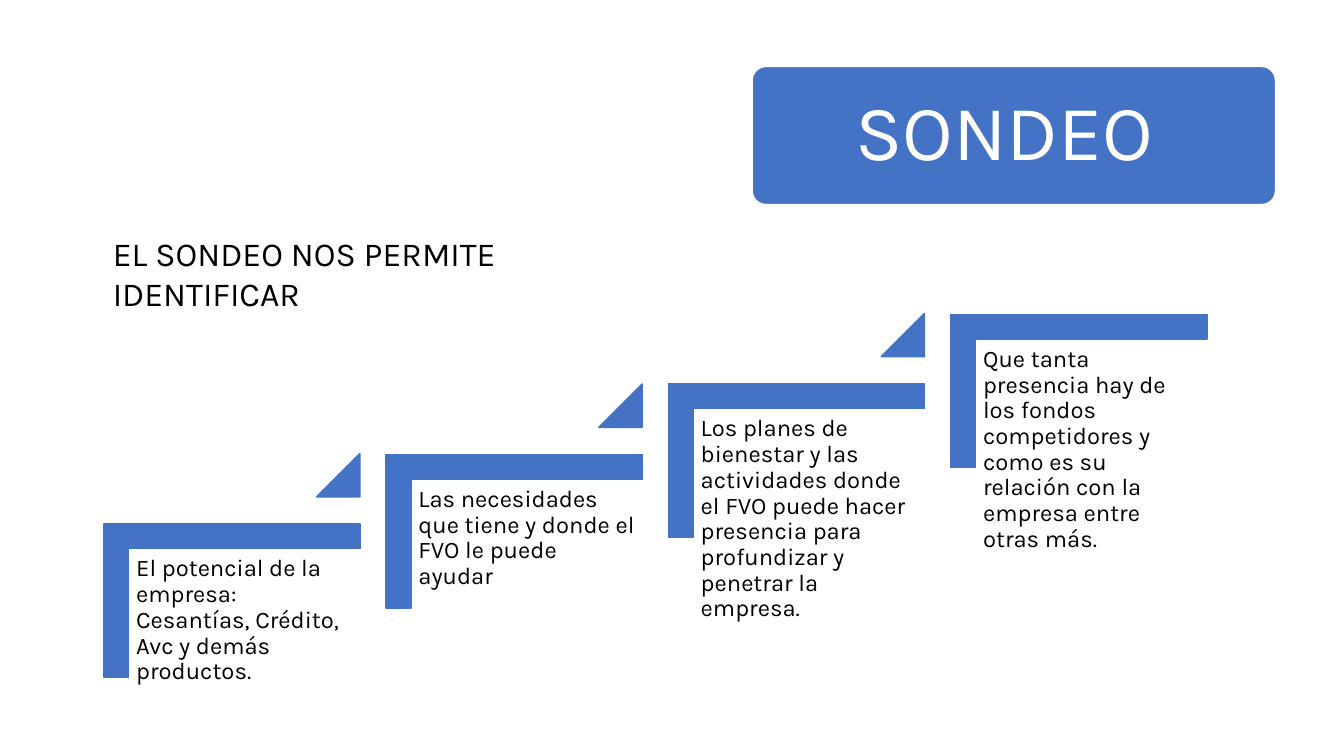
from dataclasses import dataclass

from pptx import Presentation
from pptx.dml.color import RGBColor
from pptx.enum.shapes import MSO_SHAPE as Preset
from pptx.enum.text import MSO_ANCHOR as Anchor, MSO_AUTO_SIZE as AutoSize, PP_ALIGN as Align
from pptx.util import Pt

PX = 9144


@dataclass(frozen=True)
class Theme:
    blue: RGBColor = RGBColor(0x44, 0x72, 0xC4)
    white: RGBColor = RGBColor(255, 255, 255)
    black: RGBColor = RGBColor(0, 0, 0)
    face: str = "Karla"
    heading: int = 56
    lead: int = 24
    body: int = 17


THEME = Theme()
FINDINGS = (
    "El potencial de la empresa: Cesantías, Crédito, Avc y demás productos.",
    "Las necesidades que tiene y donde el FVO le puede ayudar",
    "Los planes de bienestar y las actividades donde el FVO puede hacer presencia "
    "para profundizar y penetrar la empresa.",
    "Que tanta presencia hay de los fondos competidores y como es su relación "
    "con la empresa entre otras más.",
)
STEP_LEFT, STEP_TOP = 154, 469
STEP_RUN, TWO_STEP_RISE = 280, 139


def apply(target, values):
    for name, value in values.items():
        setattr(target, name, value)


def px(*lengths):
    return [length * PX for length in lengths]


def add_block(slide, preset, box, adjustments, outline):
    block = slide.shapes.add_shape(preset, *px(*box))
    for index, value in enumerate(adjustments):
        block.adjustments[index] = value
    block.shadow.inherit = False
    block.fill.solid()
    block.fill.fore_color.rgb = THEME.blue
    block.line.color.rgb = outline
    block.line.width = Pt(1)
    return block


def write(holder, text, size, color, inset=None, spacing=None, align=Align.LEFT,
          anchor=Anchor.TOP, fit=AutoSize.NONE):
    frame = holder.text_frame
    frame.text = text
    apply(frame, {"word_wrap": True, "auto_size": fit, "vertical_anchor": anchor})
    if inset is not None:
        sides = ("margin_left", "margin_top", "margin_right", "margin_bottom")
        apply(frame, dict.fromkeys(sides, inset * PX))
    paragraph = frame.paragraphs[0]
    apply(paragraph, {"alignment": align, "line_spacing": spacing})
    font = paragraph.runs[0].font
    apply(font, {"name": THEME.face, "size": Pt(size)})
    font.color.rgb = color


def add_heading(slide, text):
    card = add_block(slide, Preset.ROUNDED_RECTANGLE, (746, 66, 519, 137), (0.1,), THEME.white)
    title = slide.shapes.title
    title.element.addprevious(card.element)
    apply(title, dict(zip(("left", "top", "width", "height"), px(750, 70, 511, 129))))
    write(title, text, THEME.heading, THEME.white, 23, 0.9, Align.CENTER, Anchor.MIDDLE)


def add_step(slide, index, finding, has_next):
    left = STEP_LEFT + index * STEP_RUN
    top = STEP_TOP - index * TWO_STEP_RISE // 2
    bracket = add_block(slide, Preset.CORNER, (left, top, 152, 254), (0.161, 0.161), THEME.blue)
    bracket.rotation = 90
    label = slide.shapes.add_textbox(*px(left - 26, top + 76, 229, 201))
    write(label, finding, THEME.body, THEME.black, 7, 0.9)
    if has_next:
        add_block(slide, Preset.ISOSCELES_TRIANGLE, (left + 160, top - 19, 43, 43), (1,), THEME.blue)


def main():
    deck = Presentation()
    apply(deck, {"slide_width": 1333 * PX, "slide_height": 750 * PX})
    slide = deck.slides.add_slide(deck.slide_layouts.get_by_name("Title Only"))
    add_heading(slide, "SONDEO ")
    for index, finding in enumerate(FINDINGS):
        add_step(slide, index, finding, index < len(FINDINGS) - 1)
    lead = slide.shapes.add_textbox(*px(102, 226, 585, 50))
    write(lead, "EL SONDEO NOS PERMITE IDENTIFICAR", THEME.lead, THEME.black,
          fit=AutoSize.SHAPE_TO_FIT_TEXT)
    deck.save("out.pptx")


if __name__ == "__main__":
    main()
